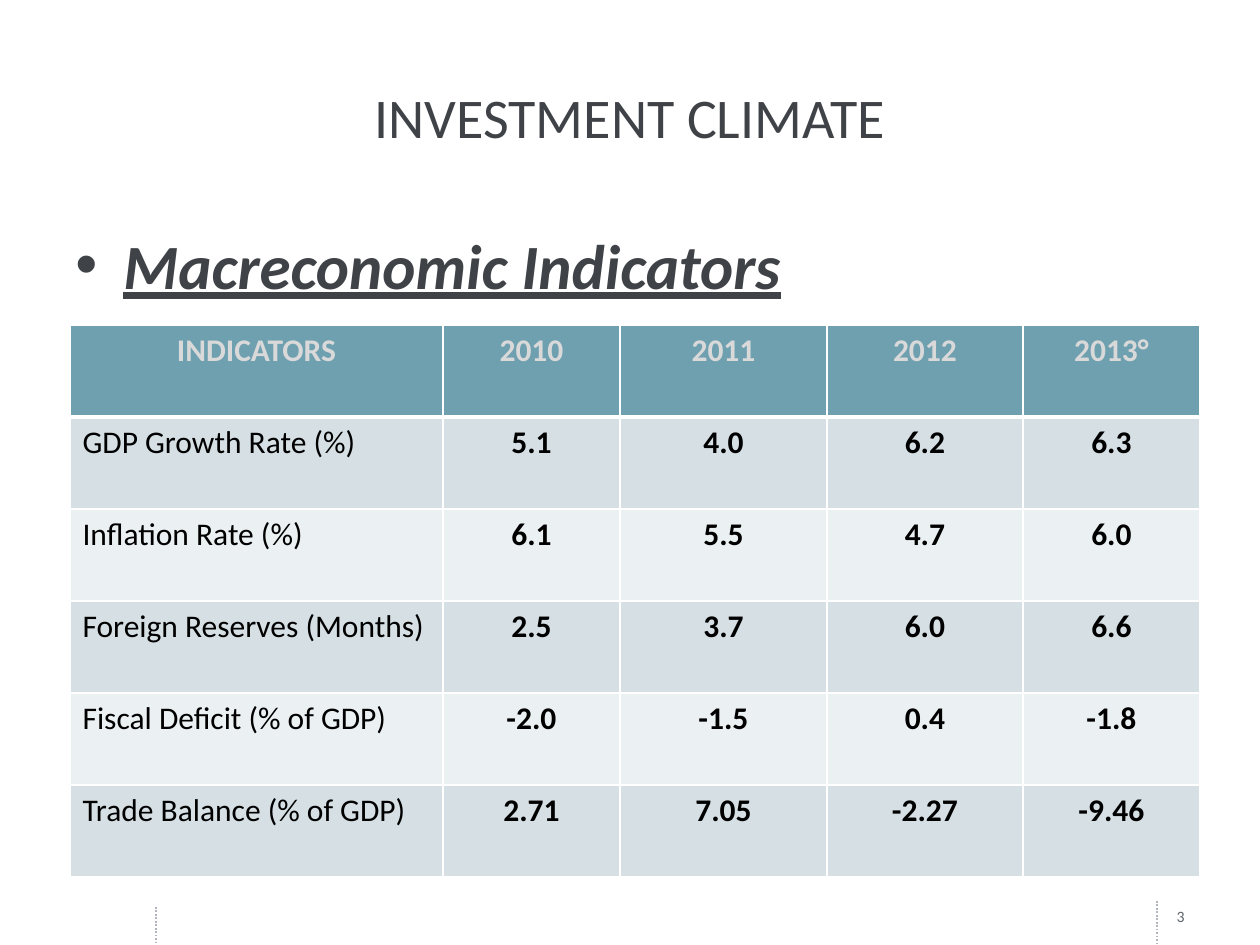
from lxml.etree import SubElement
from pptx import Presentation
from pptx.dml.color import RGBColor
from pptx.enum.dml import MSO_LINE
from pptx.enum.shapes import MSO_CONNECTOR
from pptx.enum.text import MSO_ANCHOR, PP_ALIGN
from pptx.oxml import parse_xml
from pptx.oxml.ns import nsdecls, qn
from pptx.util import Pt

PX = 914400 // 126
FONT = "Calibri"
COLORS = {
    "title": "3F4247",
    "number": "5E636A",
    "rule": "B2B5BB",
    "header": "6EA0B0",
    "header_text": "D9D9D9",
    "outline": "3B3B3B",
    "odd_row": "D5DFE4",
    "even_row": "EBF0F2",
    "border": "FFFFFF",
    "value": "000000",
}
COLUMN_WIDTHS = [373, 177, 207, 196, 177]
ROW_HEIGHT = 92
INDICATORS = [
    ["INDICATORS", "2010", "2011", "2012", "2013°"],
    ["GDP Growth Rate (%)", "5.1", "4.0", "6.2", "6.3"],
    ["Inflation Rate (%)", "6.1", "5.5", "4.7", "6.0"],
    ["Foreign Reserves (Months)", "2.5", "3.7", "6.0", "6.6"],
    ["Fiscal Deficit (% of GDP)", "-2.0", "-1.5", "0.4", "-1.8"],
    ["Trade Balance (% of GDP)", "2.71", "7.05", "-2.27", "-9.46"],
]


def px(*lengths):
    return [length * PX for length in lengths]


def rgb(name):
    return RGBColor.from_string(COLORS[name])


def line_xml(tag, color, points):
    return parse_xml(
        f'<a:{tag} {nsdecls("a")} w="{Pt(points)}"><a:solidFill>'
        f'<a:srgbClr val="{COLORS[color]}"/></a:solidFill></a:{tag}>'
    )


def write(frame, text, size, color, align, bold=False):
    """Fill a text frame with one paragraph and return that paragraph."""
    frame.text = text
    para = frame.paragraphs[0]
    para.alignment = align
    font = para.runs[0].font
    font.name, font.size, font.bold = FONT, Pt(size), bold
    font.color.rgb = rgb(color)
    return para


def add_text(page, place, text, size, color, align, anchor, bold=False):
    frame = page.shapes.add_textbox(*px(*place)).text_frame
    frame.word_wrap = True
    frame.vertical_anchor = anchor
    return write(frame, text, size, color, align, bold)


def add_bullet(para, indent):
    properties = para._p.get_or_add_pPr()
    properties.set("marL", str(indent * PX))
    properties.set("indent", str(-indent * PX))
    spacing = SubElement(properties, qn("a:spcBef"))
    SubElement(spacing, qn("a:spcPct"), val="20000")
    SubElement(properties, qn("a:buFont"), typeface="Arial")
    SubElement(properties, qn("a:buChar"), char="•")


def add_dotted_rule(page, x, top, bottom):
    rule = page.shapes.add_connector(MSO_CONNECTOR.STRAIGHT, *px(x, top, x, bottom))
    rule.line.color.rgb = rgb("rule")
    rule.line.width = Pt(1)
    rule.line.dash_style = MSO_LINE.ROUND_DOT
    SubElement(rule._element.spPr, qn("a:effectLst"))


def style_cell(cell, fill, bottom, top):
    properties = cell._tc.get_or_add_tcPr()
    for tag, points in (("lnL", 1), ("lnR", 1), ("lnT", top), ("lnB", bottom)):
        properties.append(line_xml(tag, "border", points))
    cell.fill.solid()
    cell.fill.fore_color.rgb = rgb(fill)


def add_indicator_table(page, left, top):
    size = sum(COLUMN_WIDTHS), ROW_HEIGHT * len(INDICATORS)
    table = page.shapes.add_table(
        len(INDICATORS), len(COLUMN_WIDTHS), *px(left, top, *size)
    ).table
    for column, width in zip(table.columns, px(*COLUMN_WIDTHS)):
        column.width = width
    for r, row in enumerate(INDICATORS):
        header = r == 0
        fill = "header" if header else "odd_row" if r % 2 else "even_row"
        for c, text in enumerate(row):
            cell = table.cell(r, c)
            label = c == 0 and not header
            para = write(
                cell.text_frame,
                text,
                18,
                "header_text" if header else "value",
                PP_ALIGN.LEFT if label else PP_ALIGN.CENTER,
                bold=not label,
            )
            if header:
                span = para.runs[0]._r.get_or_add_rPr()
                span.insert(0, line_xml("ln", "outline", 1))
            style_cell(cell, fill, bottom=3 if header else 1, top=3 if r == 1 else 1)


def main():
    deck = Presentation()
    deck.slide_width, deck.slide_height = px(1260, 945)
    page = deck.slides.add_slide(deck.slide_layouts[6])

    add_dotted_rule(page, 156, 907, 951)
    add_dotted_rule(page, 1157, 901, 945)
    add_text(page, (903, 882, 294, 50), "3", 9, "number",
             PP_ALIGN.RIGHT, MSO_ANCHOR.BOTTOM)
    add_text(page, (63, 38, 1134, 157), "INVESTMENT CLIMATE", 32, "title",
             PP_ALIGN.CENTER, MSO_ANCHOR.MIDDLE)
    heading = add_text(page, (63, 220, 1134, 624), "Macreconomic Indicators", 36,
                       "title", PP_ALIGN.LEFT, MSO_ANCHOR.TOP, bold=True)
    heading.runs[0].font.italic = True
    heading.runs[0].font.underline = True
    add_bullet(heading, 48)
    add_indicator_table(page, 70, 325)

    deck.save("out.pptx")


if __name__ == "__main__":
    main()
